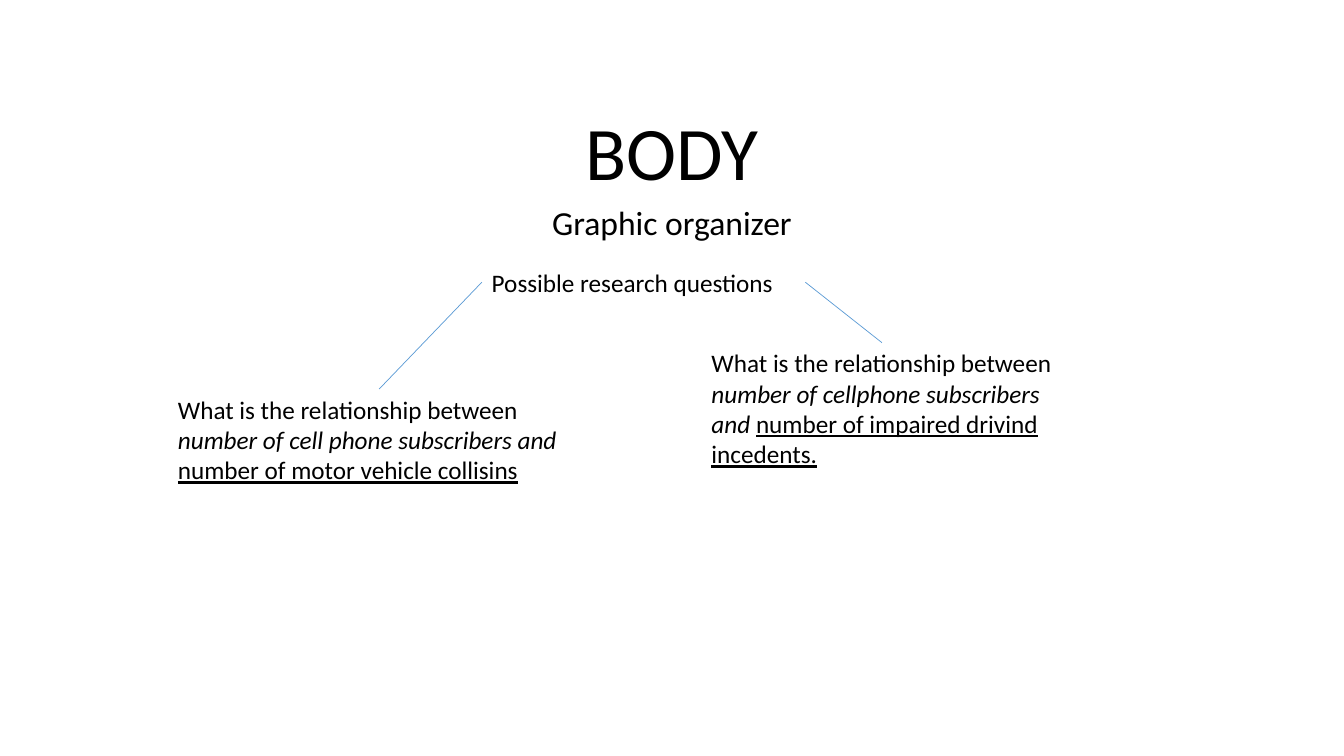
"""Build the BODY slide: a graphic organizer with two research questions."""
from dataclasses import dataclass

from lxml import etree
from pptx import Presentation
from pptx.dml.color import RGBColor
from pptx.enum import shapes, text
from pptx.oxml import ns
from pptx.util import Pt

BLACK = RGBColor(0x00, 0x00, 0x00)
BLUE = RGBColor(0x5B, 0x9B, 0xD5)
TOP, LEFT, RIGHT = 0, 1, 3


@dataclass(frozen=True)
class Phrase:
    words: str
    italic: bool = False
    underline: bool = False


@dataclass(frozen=True)
class Box:
    left: float
    top: float
    width: float
    height: float

    def lengths(self) -> tuple:
        return Pt(self.left), Pt(self.top), Pt(self.width), Pt(self.height)


@dataclass(frozen=True)
class Branch:
    side: int
    box: Box
    phrases: tuple


HEADING = Box(120, 88.56, 720, 55.44)
SUBHEADING = Box(120, 144, 720, 270)
TOPIC = Box(344.16, 187.2, 231.12, 28.8)
OPENING = Phrase("What is the relationship between ")
BRANCHES = (
    Branch(LEFT, Box(120, 277.92, 301.68, 72.72), (
        OPENING,
        Phrase("number of cell phone subscribers and ", italic=True),
        Phrase("number of motor vehicle collisins", underline=True))),
    Branch(RIGHT, Box(501.12, 244.8, 257.76, 94.32), (
        OPENING,
        Phrase("number of cellphone subscribers and ", italic=True),
        Phrase("number of impaired drivind incedents.", underline=True))),
)


def write(holder, phrases, *, size=18, align=text.PP_ALIGN.LEFT, spacing=1.0,
          anchor=text.MSO_ANCHOR.TOP, fit=text.MSO_AUTO_SIZE.NONE) -> None:
    frame = holder.text_frame
    frame.word_wrap = True
    frame.auto_size = fit
    frame.vertical_anchor = anchor
    paragraph = frame.paragraphs[0]
    paragraph.alignment = align
    paragraph.line_spacing = spacing
    paragraph.space_before = Pt(0)
    for phrase in phrases:
        run = paragraph.add_run()
        run.text = phrase.words
        run.font.name = "Calibri"
        run.font.size = Pt(size)
        run.font.italic = phrase.italic
        run.font.underline = phrase.underline
        run.font.color.rgb = BLACK


def place(holder, box: Box) -> None:
    holder.left, holder.top, holder.width, holder.height = box.lengths()


def add_question(slide, box: Box, phrases: tuple):
    question = slide.shapes.add_textbox(*box.lengths())
    write(question, phrases, fit=text.MSO_AUTO_SIZE.SHAPE_TO_FIT_TEXT)
    return question


def join(slide, topic, side: int, question) -> None:
    link = slide.shapes.add_connector(shapes.MSO_CONNECTOR.STRAIGHT, 0, 0, 0, 0)
    link.begin_connect(topic, side)
    link.end_connect(question, TOP)
    link.line.color.rgb = BLUE
    link.line.width = Pt(0.5)
    etree.SubElement(link._element.spPr, ns.qn("a:effectLst"))


def main() -> None:
    deck = Presentation()
    deck.slide_width, deck.slide_height = Pt(960), Pt(540)
    slide = deck.slides.add_slide(deck.slide_layouts[0])

    heading, subheading = slide.shapes.title, slide.placeholders[1]
    place(heading, HEADING)
    write(heading, [Phrase("BODY")], size=54, spacing=0.9,
          align=text.PP_ALIGN.CENTER, anchor=text.MSO_ANCHOR.BOTTOM)
    place(subheading, SUBHEADING)
    write(subheading, [Phrase("Graphic organizer")], size=24, spacing=0.9,
          align=text.PP_ALIGN.CENTER)

    topic = add_question(slide, TOPIC, (Phrase("Possible research questions"),))
    questions = [add_question(slide, branch.box, branch.phrases) for branch in BRANCHES]
    for branch, question in zip(BRANCHES, questions):
        join(slide, topic, branch.side, question)

    deck.save("out.pptx")


if __name__ == "__main__":
    main()
